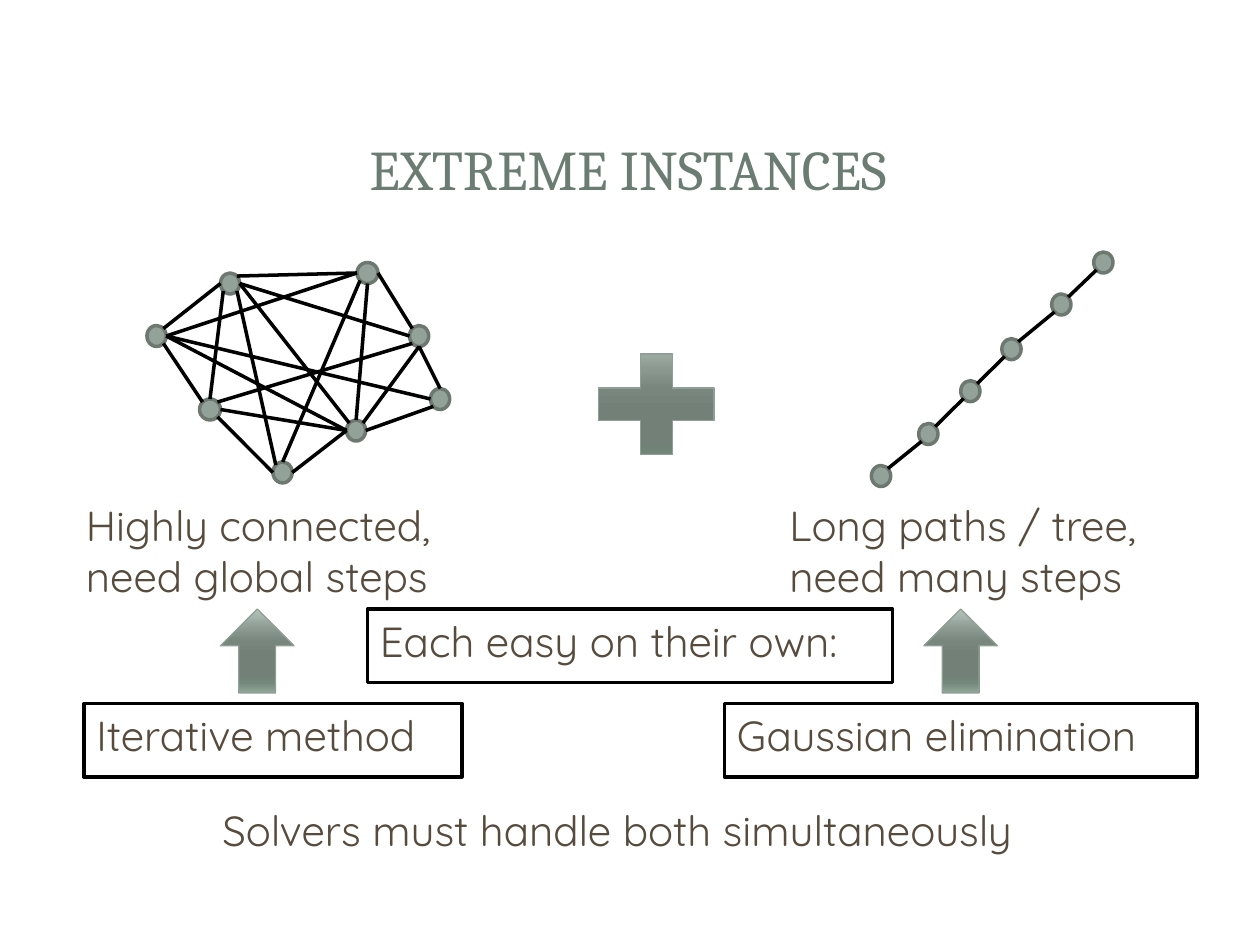
from dataclasses import dataclass
from itertools import pairwise
from math import sqrt

from lxml import etree
from pptx import Presentation
from pptx.dml.color import RGBColor
from pptx.enum.shapes import MSO_CONNECTOR, MSO_SHAPE
from pptx.enum.text import MSO_ANCHOR, PP_ALIGN
from pptx.oxml.ns import qn
from pptx.util import Pt

ELLIPSE, RECTANGLE = MSO_SHAPE.OVAL, MSO_SHAPE.RECTANGLE
UP_ARROW, PLUS = MSO_SHAPE.UP_ARROW, MSO_SHAPE.MATH_PLUS
STRAIGHT = MSO_CONNECTOR.STRAIGHT
LEFT, CENTER = PP_ALIGN.LEFT, PP_ALIGN.CENTER
TOP, MIDDLE = MSO_ANCHOR.TOP, MSO_ANCHOR.MIDDLE

COLORS = {
    "paper": "FFFFFF",
    "ink": "000000",
    "title": "6B7D72",
    "body": "564B3C",
    "node": "93A299",
    "node_rim": "6D7871",
    "symbol_rim": "8F9F96",
}
SYMBOL_GRADIENT = [
    (0, "B6C3BB"), (25, "8B9890"), (38, "79867E"), (55, "728078"),
    (80, "708176"), (88, "75887C"), (100, "91A79A"),
]
DIAGONAL = 1 / sqrt(2)
DIRECTIONS = {
    "T": (0, -1), "B": (0, 1), "L": (-1, 0), "R": (1, 0),
    "TL": (-DIAGONAL, -DIAGONAL), "TR": (DIAGONAL, -DIAGONAL),
    "BL": (-DIAGONAL, DIAGONAL), "BR": (DIAGONAL, DIAGONAL),
}


@dataclass(frozen=True)
class Node:
    left: float
    top: float
    width: float = 11
    height: float = 12

    def rim_point(self, side: str) -> tuple[float, float]:
        dx, dy = DIRECTIONS[side]
        return (self.left + self.width * (1 + dx) / 2,
                self.top + self.height * (1 + dy) / 2)


@dataclass(frozen=True)
class Edge:
    start: Node
    start_side: str
    end: Node
    end_side: str


@dataclass(frozen=True)
class Statement:
    text: str
    left: float
    top: float
    width: float
    height: float
    border: str | None = None


WEST, NORTHWEST = Node(84, 186), Node(126, 156)
SOUTHWEST, SOUTH = Node(114, 228, 12), Node(156, 264)
NORTH, NORTHEAST = Node(204, 150, 12), Node(234, 186)
SOUTHEAST, EAST = Node(198, 240), Node(246, 222)
DENSE_NODES = [WEST, NORTHWEST, SOUTHWEST, SOUTH, NORTH, NORTHEAST, SOUTHEAST, EAST]
DENSE_EDGES = [
    Edge(WEST, "TR", NORTHWEST, "L"),
    Edge(WEST, "BR", SOUTHWEST, "TL"),
    Edge(WEST, "R", NORTH, "L"),
    Edge(WEST, "R", SOUTHEAST, "L"),
    Edge(WEST, "R", EAST, "L"),
    Edge(NORTHWEST, "TR", NORTH, "L"),
    Edge(NORTHWEST, "BL", SOUTHWEST, "T"),
    Edge(NORTHWEST, "BR", SOUTH, "TL"),
    Edge(NORTHWEST, "R", SOUTHEAST, "TL"),
    Edge(NORTHWEST, "R", NORTHEAST, "L"),
    Edge(NORTH, "BL", SOUTH, "T"),
    Edge(NORTH, "R", NORTHEAST, "TL"),
    Edge(NORTH, "B", SOUTHEAST, "T"),
    Edge(SOUTHWEST, "BR", SOUTH, "L"),
    Edge(SOUTHWEST, "R", SOUTHEAST, "L"),
    Edge(SOUTHWEST, "TR", NORTHEAST, "BL"),
    Edge(SOUTH, "R", SOUTHEAST, "L"),
    Edge(SOUTHEAST, "TR", NORTHEAST, "B"),
    Edge(SOUTHEAST, "R", EAST, "BL"),
    Edge(NORTHEAST, "B", EAST, "T"),
]

PATH_NODES = [
    Node(498, 266), Node(525, 242), Node(549, 217.5),
    Node(572.5, 193.5), Node(601, 168), Node(625, 144),
]
PATH_EDGES = [Edge(upper, "BL", lower, "TR") for lower, upper in pairwise(PATH_NODES)]

STATEMENTS = [
    Statement("Highly connected, need global steps", 42, 282, 234, 72),
    Statement("Long paths / tree, need many steps", 444, 282, 222, 72),
    Statement("Solvers must handle both simultaneously", 120, 456, 480, 42),
    Statement("Each easy on their own:", 210, 348, 300, 42, "ink"),
    Statement("Iterative method", 48, 402, 216, 42, "ink"),
    Statement("Gaussian elimination", 414, 402, 270, 42, "ink"),
]


def rgb(name: str) -> RGBColor:
    return RGBColor.from_string(COLORS[name])


def add_filled_shape(slide, kind, left: float, top: float, width: float, height: float,
                     fill: str | None = None, border: str | None = None,
                     border_width: float = 2):
    """Add a shadowless shape; without a fill name it gets the symbol gradient."""
    shape = slide.shapes.add_shape(kind, Pt(left), Pt(top), Pt(width), Pt(height))
    shape.shadow.inherit = False
    if fill:
        shape.fill.solid()
        shape.fill.fore_color.rgb = rgb(fill)
    else:
        apply_symbol_gradient(shape)
    if border:
        shape.line.color.rgb = rgb(border)
        shape.line.width = Pt(border_width)
    else:
        shape.line.fill.background()
    return shape


def apply_symbol_gradient(shape) -> None:
    shape.fill.gradient()
    shape.fill.gradient_angle = 270
    stops = shape._element.spPr.find(qn("a:gradFill")).find(qn("a:gsLst"))
    for stop in list(stops):
        stops.remove(stop)
    for percent, color in SYMBOL_GRADIENT:
        stop = etree.SubElement(stops, qn("a:gs"), pos=str(percent * 1000))
        etree.SubElement(stop, qn("a:srgbClr"), val=color)


def write_text(shape, text: str, *, font: str = "Quicksand", size: float = 24,
               color: str = "body", align=LEFT, anchor=TOP) -> None:
    frame = shape.text_frame
    frame.word_wrap = True
    frame.vertical_anchor = anchor
    paragraph = frame.paragraphs[0]
    paragraph.alignment = align
    run = paragraph.add_run()
    run.text = text
    run.font.name = font
    run.font.size = Pt(size)
    run.font.color.rgb = rgb(color)


def draw_graph(slide, nodes: list[Node], edges: list[Edge]) -> None:
    for node in nodes:
        add_filled_shape(slide, ELLIPSE, node.left, node.top, node.width, node.height,
                         "node", "node_rim")
    for edge in edges:
        ends = edge.start.rim_point(edge.start_side) + edge.end.rim_point(edge.end_side)
        link = slide.shapes.add_connector(STRAIGHT, *(Pt(value) for value in ends))
        link.line.color.rgb = rgb("ink")
        link.line.width = Pt(2)
        etree.SubElement(link._element.spPr, qn("a:effectLst"))


def draw_statement(slide, statement: Statement) -> None:
    box = add_filled_shape(slide, RECTANGLE, statement.left, statement.top,
                           statement.width, statement.height, "paper", statement.border)
    write_text(box, statement.text)


def main() -> None:
    deck = Presentation()
    deck.slide_width, deck.slide_height = Pt(720), Pt(540)
    slide = deck.slides.add_slide(deck.slide_layouts[6])

    title = slide.shapes.add_textbox(Pt(34), Pt(48), Pt(650), Pt(96))
    write_text(title, "EXTREME INSTANCES", font="Cambria", size=32, color="title",
               align=CENTER, anchor=MIDDLE)
    draw_graph(slide, DENSE_NODES, DENSE_EDGES)
    draw_graph(slide, PATH_NODES, PATH_EDGES)
    for statement in STATEMENTS:
        draw_statement(slide, statement)
    for arrow_left in (126, 528):
        add_filled_shape(slide, UP_ARROW, arrow_left, 348, 42, 48,
                         border="symbol_rim", border_width=0.75)
    add_filled_shape(slide, PLUS, 330, 192, 90, 78, border="symbol_rim", border_width=0.75)
    deck.save("out.pptx")


if __name__ == "__main__":
    main()
